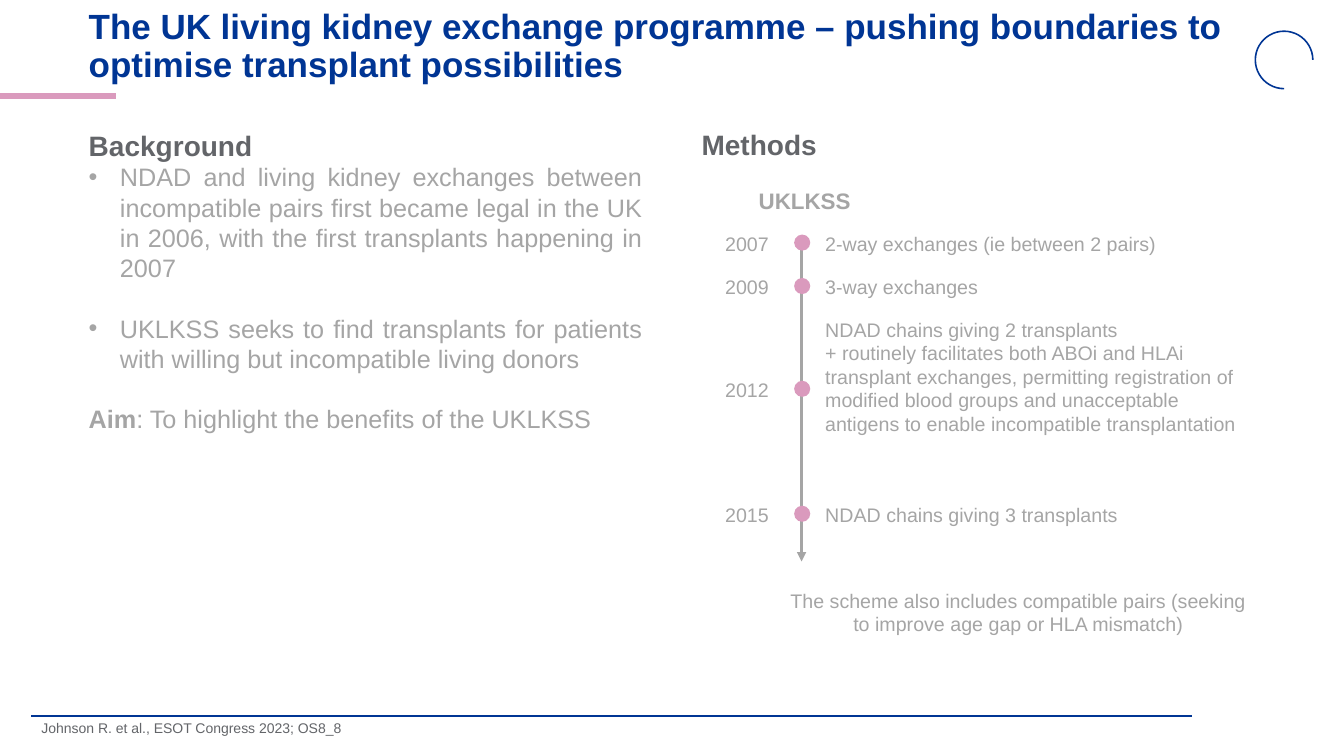
import pptx
import pptx.util
import pptx.dml.color
import pptx.enum.shapes
import pptx.enum.text
import pptx.oxml.ns
from lxml import etree

HUES = {"navy": "003594", "pink": "DA9ABD", "dark": "636569", "grey": "A5A5A5"}
FONT = "Arial"
ALIGN = pptx.enum.text.PP_ALIGN
SHAPE = pptx.enum.shapes.MSO_SHAPE
Inches = pptx.util.Inches
Pt = pptx.util.Pt

# The slide is a grid of 100 columns by 100 rows
WIDTH, HEIGHT = Inches(13.33), Inches(7.5)


def cols(n):
    return round(WIDTH * n / 100)


def rows(n):
    return round(HEIGHT * n / 100)


def span(x, y, w, h):
    return cols(x), rows(y), cols(w), rows(h)


def tint(hue):
    return pptx.dml.color.RGBColor.from_string(HUES[hue])


def add_tag(parent, name, **attrs):
    return etree.SubElement(parent, pptx.oxml.ns.qn(name), attrs)


def style(para, size, hue, bold=False, align=ALIGN.LEFT):
    para.alignment = align
    for run in para.runs:
        font = run.font
        font.name, font.size, font.bold = FONT, Pt(size), bold
        font.color.rgb = tint(hue)


def mark(para, bullet=None):
    """Set or clear the bullet that the placeholder passes on."""
    props = para._p.get_or_add_pPr()
    dent = Inches(0.31) if bullet else 0
    props.set("marL", str(dent))
    props.set("indent", str(-dent))
    if bullet:
        add_tag(props, "a:buFont", typeface=FONT)
        add_tag(props, "a:buChar", char=bullet)
    else:
        add_tag(props, "a:buNone")


def put(holder, box):
    holder.left, holder.top, holder.width, holder.height = span(*box)
    frame = holder.text_frame
    frame.word_wrap = True
    frame.auto_size = pptx.enum.text.MSO_AUTO_SIZE.NONE
    return frame


def add_text(slide, box, text, size, hue, bold=False, align=ALIGN.LEFT):
    frame = slide.shapes.add_textbox(*span(*box)).text_frame
    frame.word_wrap = True
    frame.text = text
    for para in frame.paragraphs:
        style(para, size, hue, bold, align)


def add_line(slide, x1, y1, x2, y2, hue, width, arrow=False):
    line = slide.shapes.add_connector(
        pptx.enum.shapes.MSO_CONNECTOR.STRAIGHT,
        cols(x1), rows(y1), cols(x2), rows(y2))
    line.line.color.rgb = tint(hue)
    line.line.width = Pt(width)
    if arrow:
        add_tag(line.line._get_or_add_ln(), "a:tailEnd", type="triangle")
    add_tag(line._element.spPr, "a:effectLst")


def draw_frame(slide):
    # Accent bar, footer rule and open ring
    add_line(slide, 0, 12.67, 8.63, 12.67, "pink", 4.5)
    add_line(slide, 2.33, 94.67, 88.67, 94.67, "navy", 1.5)
    ring = slide.shapes.add_shape(SHAPE.ARC, *span(93.4, 4.13, 4.28, 7.6))
    ring.adjustments[0], ring.adjustments[1] = 54, 0
    ring.shadow.inherit = False
    ring.fill.background()
    ring.line.color.rgb = tint("navy")
    ring.line.width = Pt(1.13)


def fill_title(holder, box):
    frame = put(holder, box)
    frame.vertical_anchor = pptx.enum.text.MSO_ANCHOR.MIDDLE
    frame.text = ("The UK living kidney exchange programme – pushing "
                  "boundaries to optimise transplant possibilities")
    para = frame.paragraphs[0]
    para.line_spacing = 0.9
    style(para, 25, "navy", True)


def fill_source(holder, box):
    frame = put(holder, box)
    frame.text = "Johnson R. et al., ESOT Congress 2023; OS8_8"
    para = frame.paragraphs[0]
    mark(para)
    para.space_before = Pt(0)
    para.line_spacing = 0.9
    style(para, 10, "dark")


def fill_background(holder, box):
    frame = put(holder, box)
    frame.text = "Background"
    head = frame.paragraphs[0]
    mark(head)
    head.space_before = Pt(0)
    style(head, 20, "dark", True)

    # Text, bullet and space before
    items = [
        ("NDAD and living kidney exchanges between incompatible pairs first "
         "became legal in the UK in 2006, with the first transplants "
         "happening in 2007", "•", 0),
        ("UKLKSS seeks to find transplants for patients with willing but "
         "incompatible living donors", "•", 21.6),
        ("Aim", None, 21.6),
    ]
    for text, bullet, gap in items:
        para = frame.add_paragraph()
        para.text = text
        mark(para, bullet)
        para.space_before = Pt(gap)
        style(para, 18, "grey", align=ALIGN.JUSTIFY)
    para.add_run().text = ": To highlight the benefits of the UKLKSS"
    style(para, 18, "grey", align=ALIGN.JUSTIFY)
    para.runs[0].font.bold = True


def draw_methods(slide, box):
    left, top, width, _ = box
    add_text(slide, (left, top, 15, 5.87), "Methods", 20, "dark", True)
    add_text(slide, (left + 3.38, top + 7.87, 10.05, 4.93), "UKLKSS",
             16, "grey", True, ALIGN.CENTER)

    # Time axis
    axis = left + 8.18
    add_line(slide, axis, top + 15.87, axis, top + 58, "grey", 2.25, True)

    # Year, its row, the row and height of its note, note
    events = [
        ("2007", 13.73, 13.73, 4.53, "2-way exchanges (ie between 2 pairs)"),
        ("2009", 19.47, 19.47, 4.53, "3-way exchanges"),
        ("2012", 33.07, 25.07, 17.07,
         "NDAD chains giving 2 transplants\n+ routinely facilitates both "
         "ABOi and HLAi transplant exchanges, permitting registration of "
         "modified blood groups and unacceptable antigens to enable "
         "incompatible transplantation"),
        ("2015", 49.6, 49.6, 4.53, "NDAD chains giving 3 transplants"),
    ]
    for year, row, start, tall, note in events:
        dot = slide.shapes.add_shape(
            SHAPE.OVAL, *span(axis - 0.55, top + row + 1.03, 1.2, 2.13))
        dot.shadow.inherit = False
        dot.fill.solid()
        dot.fill.fore_color.rgb = tint("pink")
        dot.line.fill.background()
        add_text(slide, (left, top + row, 8.25, 4.53), year,
                 14, "grey", align=ALIGN.CENTER)
        add_text(slide, (left + 9.2, top + start, width - 9.2, tall), note,
                 14, "grey")

    # Closing remark
    add_text(slide, (left + 5.93, top + 60.93, width - 5.93, 7.6),
             "The scheme also includes compatible pairs (seeking to improve "
             "age gap or HLA mismatch)", 14, "grey", align=ALIGN.CENTER)


def main():
    deck = pptx.Presentation()
    deck.slide_width, deck.slide_height = WIDTH, HEIGHT
    slide = deck.slides.add_slide(deck.slide_layouts[3])
    title, body, source = slide.placeholders
    draw_frame(slide)
    fill_title(title, (5.85, 1.33, 86.27, 9.73))
    fill_source(source, (2.33, 94.8, 58.8, 4.53))
    fill_background(body, (5.85, 16.27, 42.69, 42.13))
    draw_methods(slide, (51.46, 16.27, 42.69, 68.53))
    deck.save("out.pptx")


if __name__ == "__main__":
    main()
